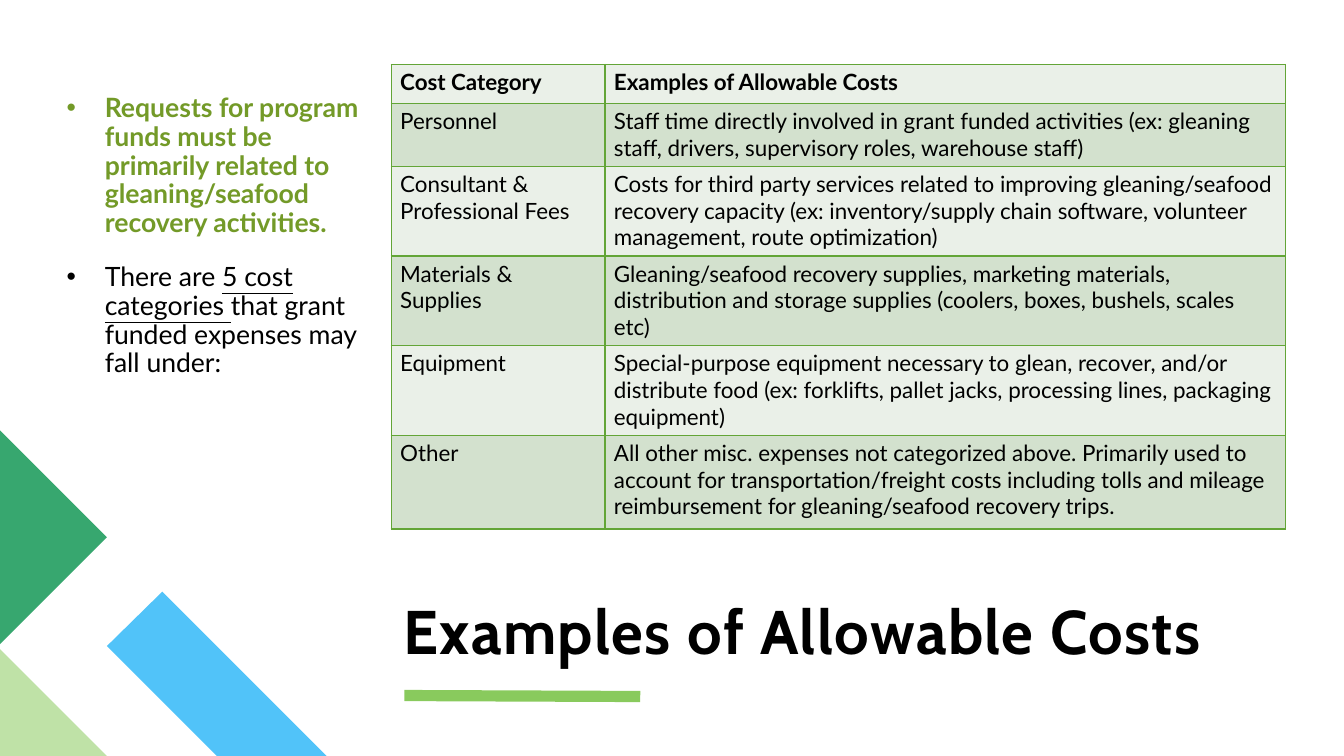
from lxml import etree
from pptx import Presentation
from pptx.dml.color import RGBColor
from pptx.enum.shapes import MSO_CONNECTOR
from pptx.enum.text import MSO_ANCHOR
from pptx.oxml.ns import qn
from pptx.util import Inches, Pt

STRAIGHT = MSO_CONNECTOR.STRAIGHT
BOTTOM = MSO_ANCHOR.BOTTOM
BLACK, OLIVE, BORDER = "000000", "739A28", "63A537"
BANDS = ["EAF0E8", "D3E1CE"]


def color(hex_value):
    return RGBColor.from_string(hex_value)


def add_run(paragraph, text, font, size, hex_value, bold=False):
    run = paragraph.add_run()
    run.text = text
    run.font.name = font
    run.font.size = Pt(size)
    run.font.bold = bold
    run.font.color.rgb = color(hex_value)
    return run


prs = Presentation()
prs.slide_width, prs.slide_height = Inches(13.33), Inches(7.5)
slide = prs.slides.add_slide(prs.slide_layouts[6])

# Corner decoration
corner_pieces = [
    ("51C3F9", [(3.24, 7.5), (2.15, 7.5), (1.06, 6.41), (1.61, 5.87)]),
    ("BFE2A7", [(1.06, 7.5), (0, 7.5), (0, 6.44)]),
    ("37A76F", [(0, 4.27), (1.06, 5.33), (0, 6.39)]),
]
for fill, points in corner_pieces:
    corners = [(Inches(x), Inches(y)) for x, y in points]
    outline = slide.shapes.build_freeform(*corners[0])
    outline.add_line_segments(corners[1:], close=True)
    piece = outline.convert_to_shape()
    piece.shadow.inherit = False
    piece.fill.solid()
    piece.fill.fore_color.rgb = color(fill)
    piece.line.fill.background()

# Title and its accent line
accent = slide.shapes.add_connector(
    STRAIGHT, Inches(4.01), Inches(6.9), Inches(6.35), Inches(6.91))
accent.line.color.rgb = color("89CA5D")
accent.line.width = Pt(8)
etree.SubElement(accent._element.spPr, qn("a:effectLst"))

title = slide.shapes.add_textbox(
    Inches(4), Inches(5.1), Inches(8.68), Inches(1.51)).text_frame
title.word_wrap = True
title.vertical_anchor = BOTTOM
title.margin_left = title.margin_right = title.margin_top = title.margin_bottom = 0
heading = title.paragraphs[0]
heading.line_spacing = 0.8
heading_run = add_run(heading, "Examples of Allowable Costs", "Cabin", 44, BLACK, True)
heading_run.font._element.set("spc", "100")

# Bulleted requirements: (text, colour, bold, underline)
requirements = [
    [("Requests for program funds must be primarily related to "
      "gleaning/seafood recovery activities.", OLIVE, True, False)],
    [("There are ", BLACK, False, False),
     ("5 cost categories ", BLACK, False, True),
     ("that grant funded expenses may fall under:", BLACK, False, False)],
]
body = slide.shapes.add_textbox(
    Inches(0.66), Inches(0.64), Inches(3.09), Inches(3.24)).text_frame
body.word_wrap = True
body.margin_left, body.margin_top = 0, Inches(0.3)
body.margin_right, body.margin_bottom = Inches(0.1), Inches(0.05)
for index, parts in enumerate(requirements):
    bullet = body.add_paragraph() if index else body.paragraphs[0]
    properties = bullet._p.get_or_add_pPr()
    properties.set("marL", str(Inches(0.38)))
    properties.set("indent", str(-Inches(0.38)))
    etree.SubElement(properties, qn("a:buFont"), typeface="Arial")
    etree.SubElement(properties, qn("a:buChar"), char="•")
    bullet.line_spacing = 0.9
    if index:
        bullet.space_before = Pt(18)
    for text, hex_value, bold, underline in parts:
        run = add_run(bullet, text, "Lato", 19, hex_value, bold)
        run.font.underline = underline

# Cost table: (row height, category, examples)
costs = [
    (0.39, "Cost Category", "Examples of Allowable Costs"),
    (0.62, "Personnel",
     "Staff time directly involved in grant funded activities (ex: gleaning "
     "staff, drivers, supervisory roles, warehouse staff)"),
    (0.89, "Consultant & Professional Fees",
     "Costs for third party services related to improving gleaning/seafood "
     "recovery capacity (ex: inventory/supply chain software, volunteer "
     "management, route optimization)"),
    (0.89, "Materials & Supplies",
     "Gleaning/seafood recovery supplies, marketing materials, distribution "
     "and storage supplies (coolers, boxes, bushels, scales etc)"),
    (0.89, "Equipment",
     "Special-purpose equipment necessary to glean, recover, and/or distribute "
     "food (ex: forklifts, pallet jacks, processing lines, packaging equipment)"),
    (0.93, "Other",
     "All other misc. expenses not categorized above. Primarily used to account "
     "for transportation/freight costs including tolls and mileage "
     "reimbursement for gleaning/seafood recovery trips."),
]
cost_table = slide.shapes.add_table(
    len(costs), 2, Inches(3.88), Inches(0.64), Inches(8.87), Inches(4.61)).table
cost_table.first_row = cost_table.horz_banding = False
cost_table.columns[0].width = Inches(2.12)
cost_table.columns[1].width = Inches(6.75)
for row, (height, *texts) in enumerate(costs):
    cost_table.rows[row].height = Inches(height)
    for column, text in enumerate(texts):
        cell = cost_table.cell(row, column)
        cell.margin_left = cell.margin_right = Inches(0.09)
        cell.margin_top = cell.margin_bottom = Inches(0.04)
        cell_properties = cell._tc.get_or_add_tcPr()
        for side in ("lnL", "lnR", "lnT", "lnB"):
            edge = etree.SubElement(cell_properties, qn(f"a:{side}"), w=str(Pt(1)))
            edge_fill = etree.SubElement(edge, qn("a:solidFill"))
            etree.SubElement(edge_fill, qn("a:srgbClr"), val=BORDER)
        cell.fill.solid()
        cell.fill.fore_color.rgb = color(BANDS[row % 2])
        add_run(cell.text_frame.paragraphs[0], text, "Lato", 16, BLACK, row == 0)

prs.save("out.pptx")
